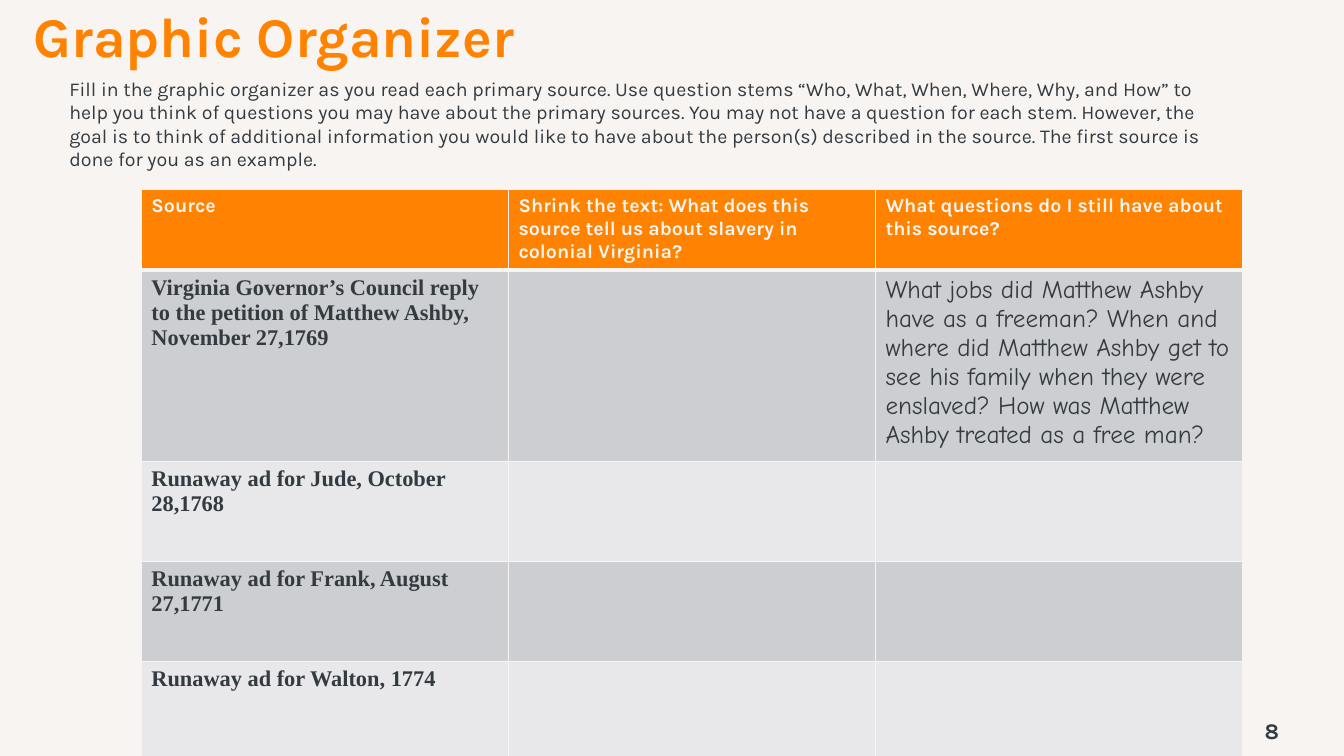
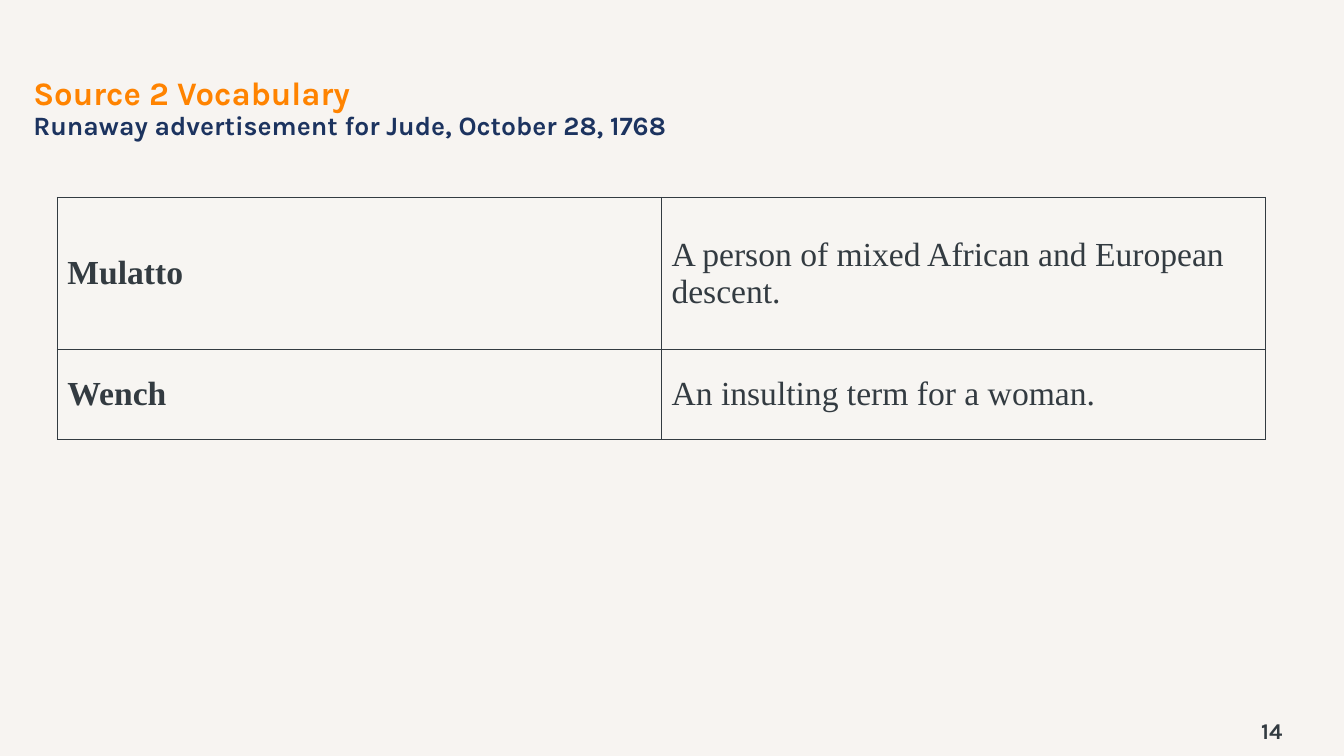
from dataclasses import dataclass

from lxml import etree
from pptx import Presentation
from pptx.dml.color import RGBColor
from pptx.enum.text import MSO_ANCHOR, MSO_AUTO_SIZE, PP_ALIGN
from pptx.oxml.ns import qn
from pptx.util import Pt

LEFT, CENTER = PP_ALIGN.LEFT, PP_ALIGN.CENTER
TOP, MIDDLE = MSO_ANCHOR.TOP, MSO_ANCHOR.MIDDLE
FIXED = MSO_AUTO_SIZE.NONE


@dataclass(frozen=True)
class Theme:
    paper: str = "F7F4F1"
    orange: str = "FF8300"
    navy: str = "1C335F"
    ink: str = "333B41"
    dark: str = "CDCED2"
    light: str = "E8E8EA"
    pale: str = "F7F5F2"
    sans: str = "Karla"
    serif: str = "Times New Roman"
    hand: str = "Comic Neue"
    title: float = 40
    topic: float = 23.4
    sub: float = 18.9
    note: float = 14
    label: float = 16
    reply: float = 18
    term: float = 24


T = Theme()

# Content
INTRO = (
    "Fill in the graphic organizer as you read each primary source. "
    "Use question stems “Who, What, When, Where, Why, and How” to help you "
    "think of questions you may have about the primary sources. You may not "
    "have a question for each stem. However, the goal is to think of "
    "additional information you would like to have about the person(s) "
    "described in the source. The first source is done for you as an example."
)
HEADS = [
    "Source",
    "Shrink the text: What does this source tell us about slavery in "
    "colonial Virginia?",
    "What questions do I still have about this source?",
]
SOURCES = [
    ["Virginia Governor’s Council reply to the petition of Matthew Ashby, "
     "November 27,1769", "",
     "What jobs did Matthew Ashby have as a freeman? When and where did "
     "Matthew Ashby get to see his family when they were enslaved? How was "
     "Matthew Ashby treated as a free man?"],
    ["Runaway ad for Jude, October 28,1768", "", ""],
    ["Runaway ad for Frank, August 27,1771", "", ""],
    ["Runaway ad for Walton, 1774", "", ""],
]
TERMS = [
    ["Mulatto", "A person of mixed African and European descent."],
    ["Wench", "An insulting term for a woman."],
]


def write(frame, text, first=True, size=T.note, font=T.sans, color=T.ink,
          bold=False, align=LEFT, space=1.0):
    """Write one paragraph; first=False adds it below the last."""
    para = frame.paragraphs[0] if first else frame.add_paragraph()
    para.alignment = align
    para.line_spacing = space
    para.space_before = Pt(0)
    run = para.add_run()
    run.text = text
    run.font.size = Pt(size)
    run.font.name = font
    run.font.bold = bold
    run.font.color.rgb = RGBColor.from_string(color)


def add_box(slide, x, y, w, h, anchor=TOP):
    box = slide.shapes.add_textbox(Pt(x), Pt(y), Pt(w), Pt(h))
    frame = box.text_frame
    frame.word_wrap = True
    frame.vertical_anchor = anchor
    return frame


def add_page(deck, number, lines, top):
    """Add a slide with its title lines and page number."""
    slide = deck.slides.add_slide(deck.slide_layouts[5])
    title = slide.shapes.title
    title.left, title.top = Pt(16.6), Pt(top)
    title.width, title.height = Pt(926.6), Pt(53)
    frame = title.text_frame
    frame.word_wrap = True
    frame.auto_size = FIXED
    frame.vertical_anchor = MIDDLE
    for i, (text, size, color) in enumerate(lines):
        write(frame, text, first=i == 0, size=size, color=color, bold=True,
              space=0.9)
    foot = add_box(slide, 874, 507.6, 69, 28.8, MIDDLE)
    write(foot, str(number), size=T.label, bold=True, align=CENTER)
    return slide


def add_edges(cell, color, **widths):
    props = cell._tc.get_or_add_tcPr()
    for side in "LRTB":
        line = etree.SubElement(props, qn(f"a:ln{side}"),
                                w=str(Pt(widths.get(side, 1))))
        fill = etree.SubElement(line, qn("a:solidFill"))
        etree.SubElement(fill, qn("a:srgbClr"), val=color)


def add_grid(slide, x, y, width, heights, rows, style, edge, anchor=TOP):
    """style(row, col) gives fill, text format and edge widths of a cell."""
    count = len(rows[0])
    table = slide.shapes.add_table(len(rows), count, Pt(x), Pt(y), Pt(width),
                                   Pt(sum(heights))).table
    table.first_row = table.horz_banding = False
    for col in table.columns:
        col.width = Pt(width / count)
    for r, row in enumerate(rows):
        table.rows[r].height = Pt(heights[r])
        for c, text in enumerate(row):
            cell = table.cell(r, c)
            fill, look, widths = style(r, c)
            add_edges(cell, edge, **widths)
            cell.fill.solid()
            cell.fill.fore_color.rgb = RGBColor.from_string(fill)
            cell.vertical_anchor = anchor
            if text:
                write(cell.text_frame, text, **look)


def source_style(r, c):
    if r == 0:
        return T.orange, dict(color=T.paper, bold=True), dict(B=3)
    look = dict(size=T.label, font=T.serif, bold=True)
    if c == 2:
        look = dict(size=T.reply, font=T.hand)
    return (T.dark if r % 2 else T.light), look, dict(T=3 if r == 1 else 1)


def term_style(r, c):
    return T.pale, dict(size=T.term, font=T.serif, bold=c == 0), {}


def main():
    deck = Presentation()
    deck.slide_width, deck.slide_height = Pt(960), Pt(540)
    back = deck.slide_master.background.fill
    back.solid()
    back.fore_color.rgb = RGBColor.from_string(T.paper)

    # Graphic organizer
    page = add_page(deck, 8, [("Graphic Organizer", T.title, T.orange)], 1.4)
    add_grid(page, 101, 135.4, 786.6, [55.4, 104, 71.4, 71.4, 71.4],
             [HEADS] + SOURCES, source_style, T.paper)
    write(add_box(page, 42.4, 51.2, 832.4, 75), INTRO)

    # Vocabulary
    page = add_page(deck, 14, [
        ("Source 2 Vocabulary", T.topic, T.orange),
        ("Runaway advertisement for Jude, October 28, 1768", T.sub, T.navy),
    ], 51.6)
    add_grid(page, 41, 141, 863, [108.6, 64.2], TERMS, term_style, T.ink,
             MIDDLE)

    deck.save("out.pptx")


if __name__ == "__main__":
    main()
